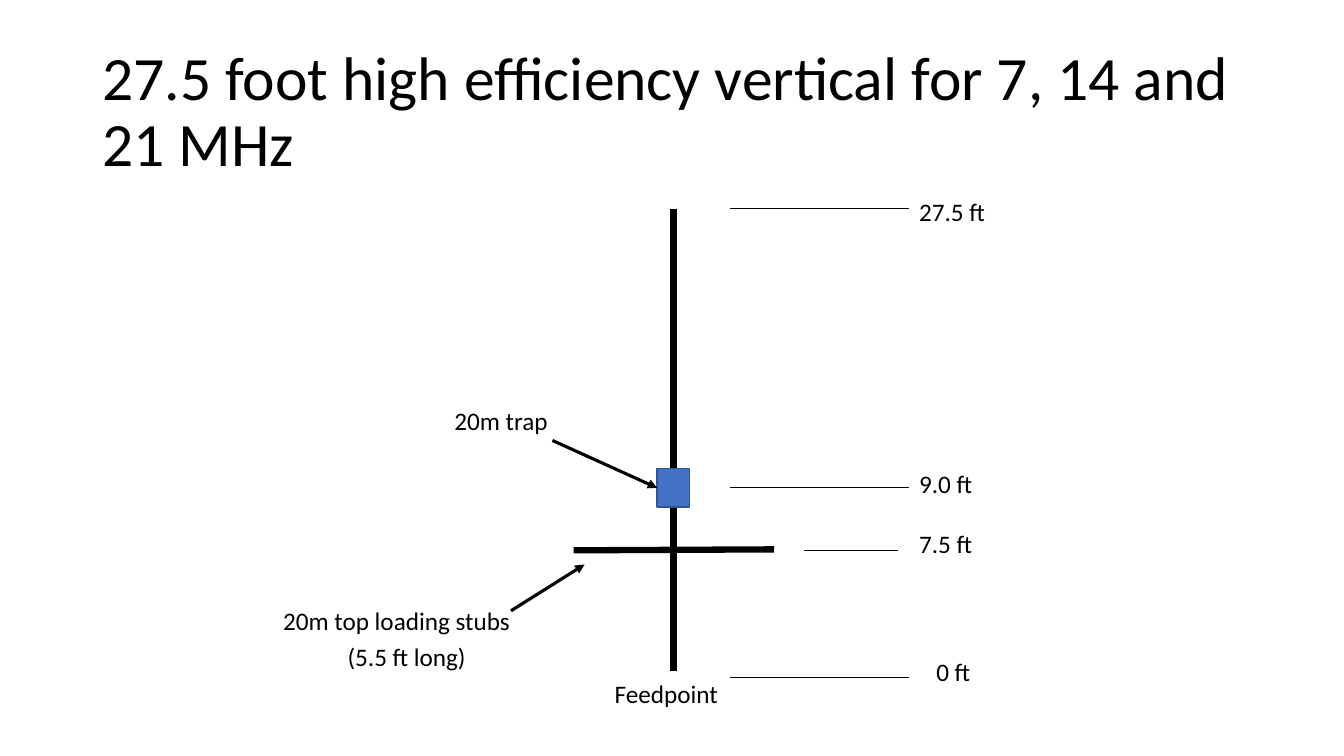
from pptx import Presentation
from pptx.dml.color import RGBColor
from pptx.enum.shapes import MSO_CONNECTOR, MSO_SHAPE
from pptx.enum.text import MSO_ANCHOR, PP_ALIGN
from pptx.oxml.ns import qn
from pptx.util import Pt
from lxml import etree

STRAIGHT = MSO_CONNECTOR.STRAIGHT
RECTANGLE = MSO_SHAPE.RECTANGLE
MIDDLE = MSO_ANCHOR.MIDDLE
LEFT = PP_ALIGN.LEFT

BLACK = RGBColor(0x00, 0x00, 0x00)
WHITE = RGBColor(0xFF, 0xFF, 0xFF)
TRAP_BLUE = RGBColor(0x44, 0x72, 0xC4)
TRAP_EDGE = RGBColor(0x32, 0x54, 0x91)
FONT = "Calibri"

MAST_X = 481
MAST_TOP = 149
LABEL_HEIGHT = 29

# Label text, left, top, width
LABELS = [
    ("27.5 ft", 649.4, 136.8, 62.6),
    ("9.0 ft", 649.4, 331.2, 53.3),
    ("7.5 ft", 649.4, 373.7, 53.3),
    ("0 ft", 661.7, 465.1, 39.6),
    ("20m trap", 317.5, 285.8, 82),
    ("20m top loading stubs", 195.1, 429.1, 178.6),
    ("(5.5 ft long)", 241.2, 454.3, 100.8),
    ("Feedpoint", 432, 481, 89.3),
]

# Height marks: left, right, y
HEIGHT_MARKS = [
    (521.3, 649.4, MAST_TOP),
    (521.3, 649.4, 347.8),
    (574.6, 641.5, 393.1),
    (521.3, 649.4, 483.8),
]


def add_span(para, text, size):
    span = para.add_run()
    span.text = text
    span.font.name = FONT
    span.font.size = Pt(size)
    span.font.color.rgb = BLACK


def set_title(page, text):
    title = page.shapes.title
    title.left, title.top = Pt(66), Pt(28.75)
    title.width, title.height = Pt(828), Pt(104.4)
    frame = title.text_frame
    frame.word_wrap = True
    frame.vertical_anchor = MIDDLE
    para = frame.paragraphs[0]
    para.alignment = LEFT
    para.line_spacing = 0.9
    add_span(para, text, 44)


def add_label(page, text, left, top, width):
    box = page.shapes.add_textbox(Pt(left), Pt(top), Pt(width), Pt(LABEL_HEIGHT))
    box.text_frame.word_wrap = False
    add_span(box.text_frame.paragraphs[0], text, 18)


def add_line(page, start, end, weight, arrow=False):
    line = page.shapes.add_connector(
        STRAIGHT, Pt(start[0]), Pt(start[1]), Pt(end[0]), Pt(end[1]))
    line.line.color.rgb = BLACK
    line.line.width = Pt(weight)
    if arrow:
        outline = line.line._get_or_add_ln()
        etree.SubElement(outline, qn("a:tailEnd"), type="triangle")
    etree.SubElement(line._element.spPr, qn("a:effectLst"))


def add_trap(page):
    width, height = 23.4, 27.6
    trap = page.shapes.add_shape(
        RECTANGLE, Pt(MAST_X - width / 2), Pt(334.6), Pt(width), Pt(height))
    trap.shadow.inherit = False
    trap.fill.solid()
    trap.fill.fore_color.rgb = TRAP_BLUE
    trap.line.color.rgb = TRAP_EDGE
    trap.line.width = Pt(1)


def main():
    deck = Presentation()
    deck.slide_width, deck.slide_height = Pt(960), Pt(540)
    page = deck.slides.add_slide(deck.slide_layouts[5])
    page.background.fill.solid()
    page.background.fill.fore_color.rgb = WHITE
    set_title(page, "27.5 foot high efficiency vertical for 7, 14 and 21 MHz")

    # Antenna: mast, loading stubs and trap
    add_line(page, (MAST_X, MAST_TOP), (MAST_X, 479.5), 4.5)
    add_line(page, (553, 392.4), (409.7, 393.1), 4.5)
    add_trap(page)

    # Pointers to the trap and the stubs
    add_line(page, (394.6, 314.6), (469.4, 348.5), 2.25, arrow=True)
    add_line(page, (365, 436.3), (417.6, 403.2), 2.25, arrow=True)

    # Height marks and labels
    for left, right, y in HEIGHT_MARKS:
        add_line(page, (left, y), (right, y), 0.5)
    for label in LABELS:
        add_label(page, *label)

    deck.save("out.pptx")


if __name__ == "__main__":
    main()
